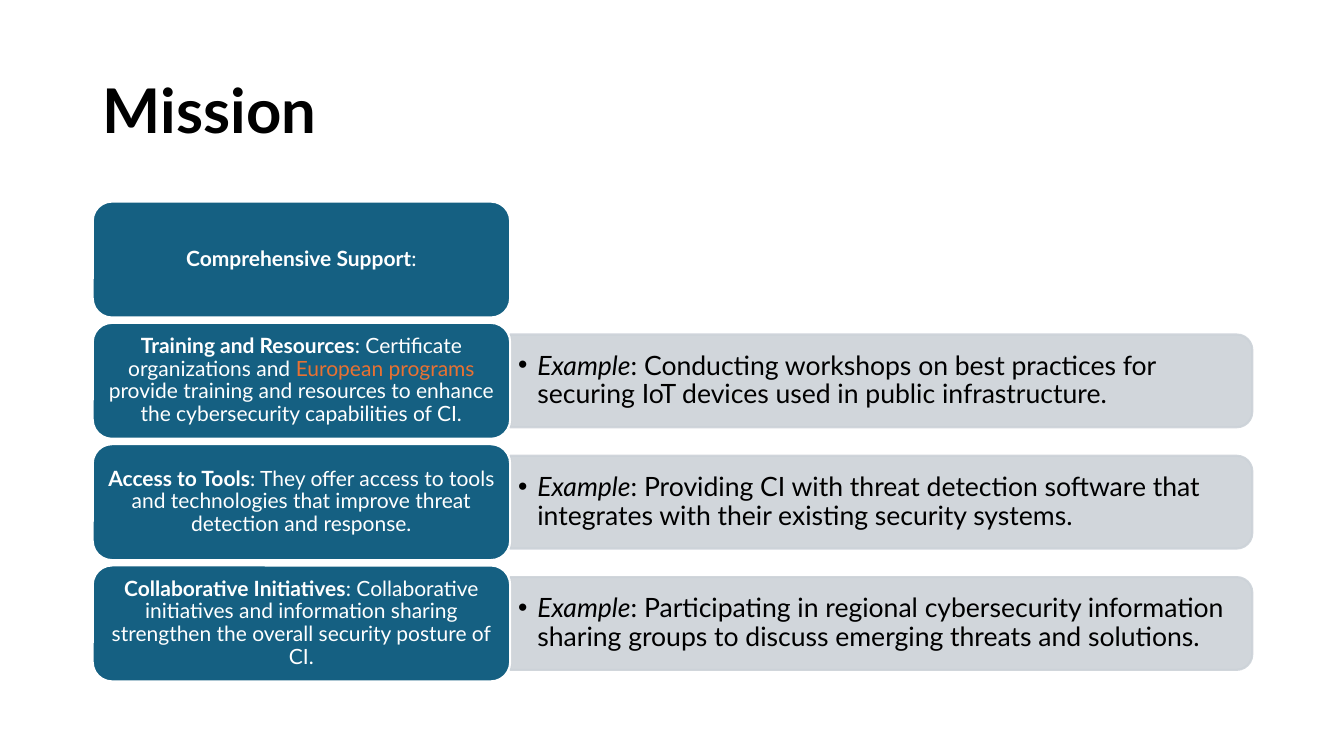
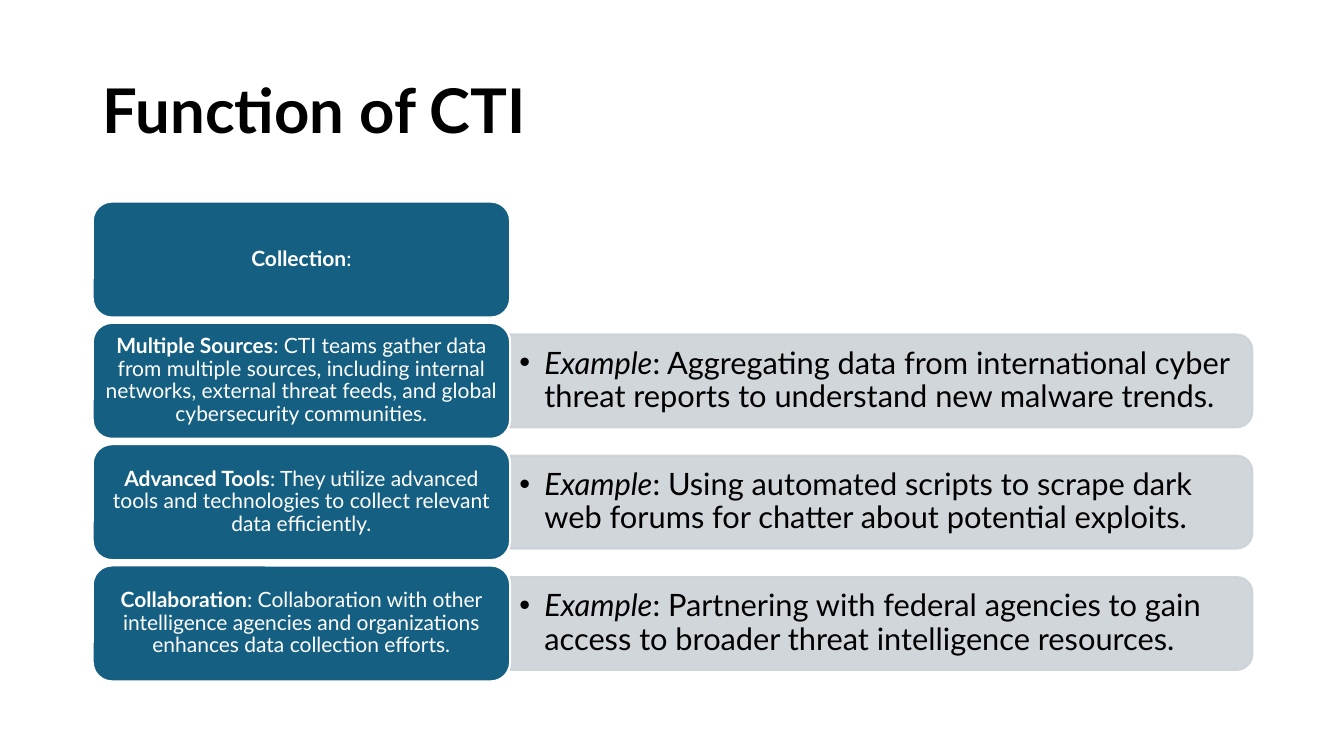
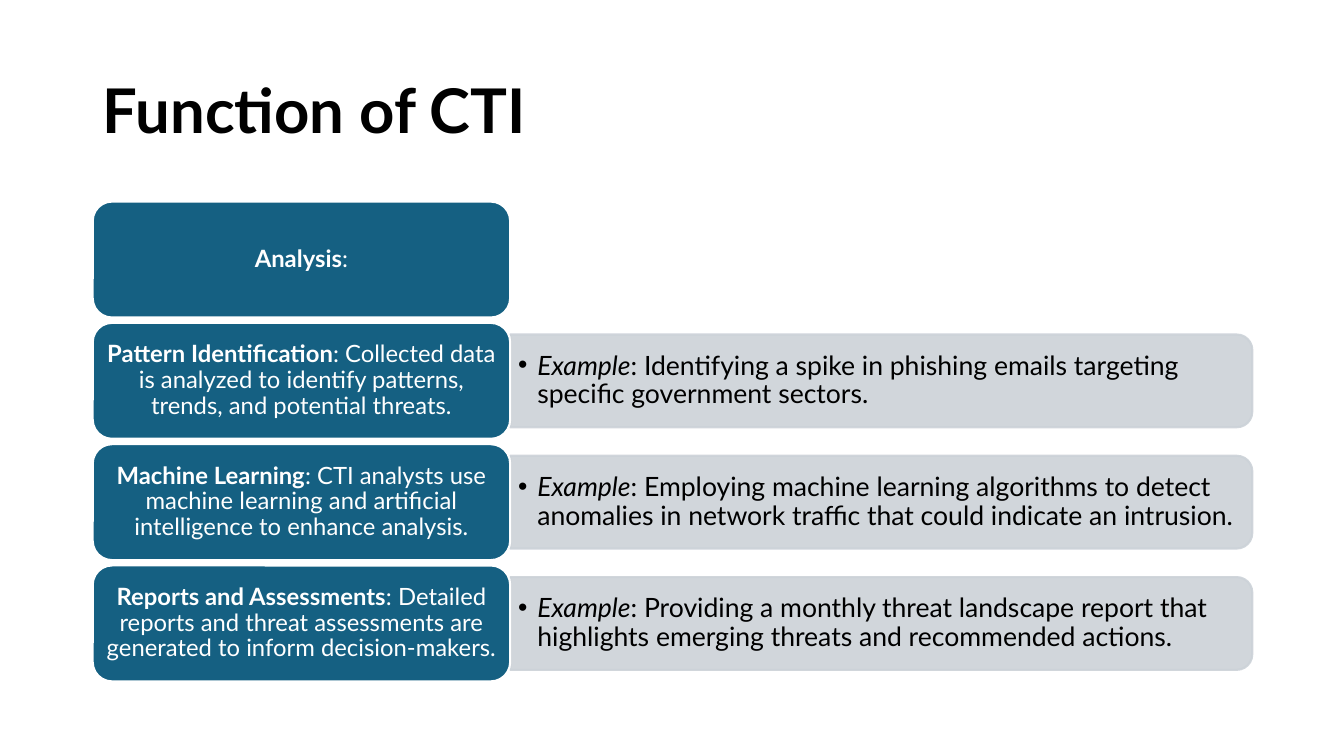
import lxml.etree
import pptx
import pptx.dml.color
import pptx.enum.shapes
import pptx.enum.text
import pptx.oxml.ns
import pptx.util

Inches = pptx.util.Inches
RGBColor = pptx.dml.color.RGBColor
MSO_SHAPE = pptx.enum.shapes.MSO_SHAPE
MSO_ANCHOR = pptx.enum.text.MSO_ANCHOR
PP_ALIGN = pptx.enum.text.PP_ALIGN
qn = pptx.oxml.ns.qn

BLACK = RGBColor(0x00, 0x00, 0x00)
WHITE = RGBColor(0xFF, 0xFF, 0xFF)
TEAL = RGBColor(0x15, 0x60, 0x82)
ORANGE = RGBColor(0xE9, 0x71, 0x32)
GREY = RGBColor(0xCC, 0xD2, 0xD8)

LEFT, TOP, WIDTH, HEIGHT = 0.92, 2, 11.5, 4.76
ROWS = 4
CARD_W, CARD_H = 4.14, 1.15
PITCH = (HEIGHT - CARD_H) / (ROWS - 1)
PANEL_H, DETAIL_W, DETAIL_H = 0.92, 7.32, 0.83
CARD_INSETS = {15: (0.06, 0.03), 17: (0.07, 0.04)}
DETAIL_INSETS = {19: (0.08, 0.04), 22: (0.09, 0.05)}
BULLET_INDENT = {19: 0.19, 22: 0.25}


class Deck:
    """Holds the shared style and the current slide."""

    def __init__(self):
        self.prs = pptx.Presentation()
        self.prs.slide_width, self.prs.slide_height = Inches(13.33), Inches(7.5)

    def slide(self, title):
        self.s = self.prs.slides.add_slide(self.prs.slide_layouts[5])
        sp = self.s.shapes.title
        box = {"left": LEFT, "top": 0.4, "width": WIDTH, "height": 1.45}
        for name, value in box.items():
            setattr(sp, name, Inches(value))
        self.text(sp, [(title, {"bold": True})], (0.1, 0.05), 44, BLACK, PP_ALIGN.LEFT)

    def text(self, sp, runs, insets, size, color, align):
        tf = sp.text_frame
        x, y = (Inches(v) for v in insets)
        frame = {
            "word_wrap": True,
            "auto_size": pptx.enum.text.MSO_AUTO_SIZE.NONE,
            "vertical_anchor": MSO_ANCHOR.MIDDLE,
            "margin_left": x, "margin_right": x,
            "margin_top": y, "margin_bottom": y,
        }
        for name, value in frame.items():
            setattr(tf, name, value)
        p = tf.paragraphs[0]
        p.alignment, p.line_spacing = align, 0.9
        for words, style in runs:
            r = p.add_run()
            r.text = words
            font = {"name": "Lato", "size": pptx.util.Pt(size), "bold": False, "color": color}
            for name, value in {**font, **style}.items():
                if name == "color":
                    r.font.color.rgb = value
                else:
                    setattr(r.font, name, value)
        return p

    def shape(self, kind, x, y, w, h, fill, line):
        sp = self.s.shapes.add_shape(kind, Inches(x), Inches(y), Inches(w), Inches(h))
        sp.shadow.inherit = False
        sp.fill.solid()
        sp.fill.fore_color.rgb = fill
        sp.line.color.rgb = line
        sp.line.width = pptx.util.Pt(1.5)
        return sp

    def card(self, y, runs, size):
        sp = self.shape(MSO_SHAPE.ROUNDED_RECTANGLE, LEFT, y, CARD_W, CARD_H, TEAL, WHITE)
        self.text(sp, runs, CARD_INSETS[size], size, WHITE, PP_ALIGN.CENTER)

    def panel(self, middle):
        length = WIDTH - CARD_W
        x = LEFT + CARD_W + (length - PANEL_H) / 2
        sp = self.shape(MSO_SHAPE.ROUND_2_SAME_RECTANGLE, x, middle - length / 2,
                        PANEL_H, length, GREY, GREY)
        sp.rotation = 90
        for color in sp.element.spPr.iter(qn("a:srgbClr")):
            lxml.etree.SubElement(color, qn("a:alpha"), val="90000")

    def detail(self, middle, words, size):
        sp = self.s.shapes.add_textbox(Inches(LEFT + CARD_W), Inches(middle - DETAIL_H / 2),
                                       Inches(DETAIL_W), Inches(DETAIL_H))
        runs = [("Example", {"italic": True}), (": " + words, {})]
        p = self.text(sp, runs, DETAIL_INSETS[size], size, BLACK, PP_ALIGN.LEFT)
        p.level = 1
        pPr = p._p.get_or_add_pPr()
        indent = Inches(BULLET_INDENT[size])
        pPr.set("marL", str(indent))
        pPr.set("indent", str(-indent))
        lxml.etree.SubElement(pPr, qn("a:buFont"), typeface="Arial")
        lxml.etree.SubElement(pPr, qn("a:buChar"), char="•")

    def rows(self, rows, card_size, detail_size):
        for i, (heading, runs, example) in enumerate(rows):
            y = TOP + i * PITCH
            if example:
                middle = y + CARD_H / 2
                self.panel(middle)
                self.detail(middle, example, detail_size)
            self.card(y, [(heading, {"bold": True}), *runs], card_size)


def row(heading, words="", example=None):
    return heading, [(": " + words if words else ":", {})], example


SLIDES = [
    ("Mission", 15, 19, [
        row("Comprehensive Support"),
        ("Training and Resources", [
            (": Certificate organizations and ", {}),
            ("European programs ", {"color": ORANGE}),
            ("provide training and resources to enhance the cybersecurity capabilities of CI.", {}),
        ], "Conducting workshops on best practices for securing IoT devices used in public "
           "infrastructure."),
        row("Access to Tools",
            "They offer access to tools and technologies that improve threat detection and response.",
            "Providing CI with threat detection software that integrates with their existing "
            "security systems."),
        row("Collaborative Initiatives",
            "Collaborative initiatives and information sharing strengthen the overall security "
            "posture of CI.",
            "Participating in regional cybersecurity information sharing groups to discuss "
            "emerging threats and solutions."),
    ]),
    ("Function of CTI", 15, 22, [
        row("Collection"),
        row("Multiple Sources",
            "CTI teams gather data from multiple sources, including internal networks, external "
            "threat feeds, and global cybersecurity communities.",
            "Aggregating data from international cyber threat reports to understand new malware "
            "trends."),
        row("Advanced Tools",
            "They utilize advanced tools and technologies to collect relevant data efficiently.",
            "Using automated scripts to scrape dark web forums for chatter about potential exploits."),
        row("Collaboration",
            "Collaboration with other intelligence agencies and organizations enhances data "
            "collection efforts.",
            "Partnering with federal agencies to gain access to broader threat intelligence "
            "resources."),
    ]),
    ("Function of CTI", 17, 19, [
        row("Analysis"),
        row("Pattern Identification",
            "Collected data is analyzed to identify patterns, trends, and potential threats.",
            "Identifying a spike in phishing emails targeting specific government sectors."),
        row("Machine Learning",
            "CTI analysts use machine learning and artificial intelligence to enhance analysis.",
            "Employing machine learning algorithms to detect anomalies in network traffic that "
            "could indicate an intrusion."),
        row("Reports and Assessments",
            "Detailed reports and threat assessments are generated to inform decision-makers.",
            "Providing a monthly threat landscape report that highlights emerging threats and "
            "recommended actions."),
    ]),
]


def main():
    deck = Deck()
    for title, card_size, detail_size, rows in SLIDES:
        deck.slide(title)
        deck.rows(rows, card_size, detail_size)
    deck.prs.save("out.pptx")


if __name__ == "__main__":
    main()
